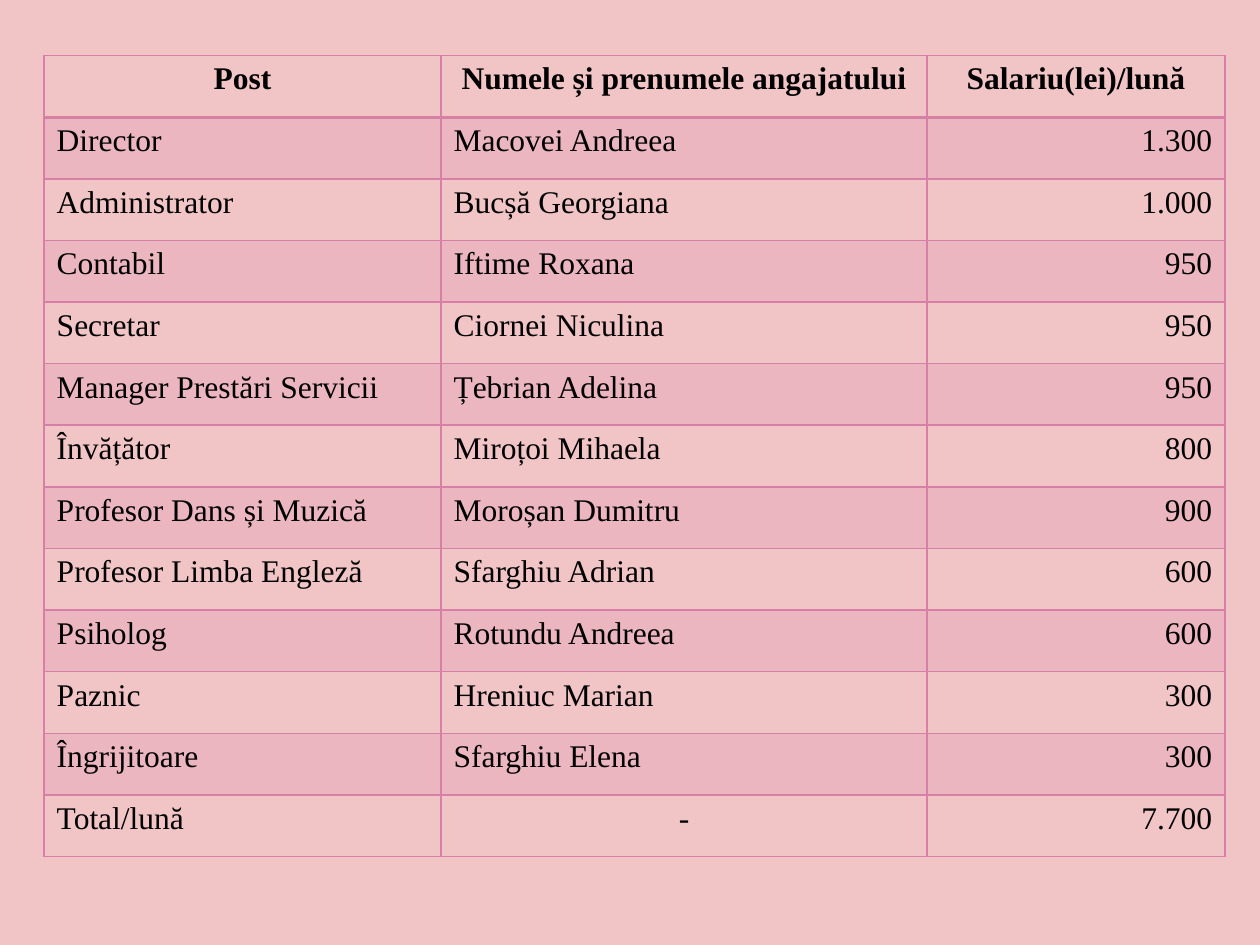
"""Builds a slide with the monthly salary table of the staff."""
import pptx
import pptx.dml.color
import pptx.enum.text
import pptx.oxml
import pptx.oxml.ns
import pptx.util

Cm = pptx.util.Cm
Pt = pptx.util.Pt
ALIGN = pptx.enum.text.PP_ALIGN

COLOURS = {"background": "F1C4C6", "accent": "D680A5", "text": "000000"}
FONT = "Times New Roman"
COLUMN_WIDTHS = (8, 9.8, 6)
TABLE_HEIGHT = 16.15
COLUMN_ALIGNS = (ALIGN.LEFT, ALIGN.LEFT, ALIGN.RIGHT)
HEADER = ("Post", "Numele și prenumele angajatului", "Salariu(lei)/lună")
STAFF = (
    ("Director", "Macovei Andreea", "1.300"),
    ("Administrator", "Bucșă Georgiana", "1.000"),
    ("Contabil", "Iftime Roxana", "950"),
    ("Secretar", "Ciornei Niculina", "950"),
    ("Manager Prestări Servicii", "Țebrian Adelina", "950"),
    ("Învățător", "Miroțoi Mihaela", "800"),
    ("Profesor Dans și Muzică", "Moroșan Dumitru", "900"),
    ("Profesor Limba Engleză", "Sfarghiu Adrian", "600"),
    ("Psiholog", "Rotundu Andreea", "600"),
    ("Paznic", "Hreniuc Marian", "300"),
    ("Îngrijitoare", "Sfarghiu Elena", "300"),
)
TOTAL = ("Total/lună", "-", "7.700")


def colour(name):
    return pptx.dml.color.RGBColor.from_string(COLOURS[name])


def set_borders(cell, top, bottom):
    properties = cell._tc.get_or_add_tcPr()
    for side, width in (("L", 1), ("R", 1), ("T", top), ("B", bottom)):
        properties.append(pptx.oxml.parse_xml(
            f'<a:ln{side} {pptx.oxml.ns.nsdecls("a")} w="{Pt(width)}">'
            f'<a:solidFill><a:srgbClr val="{COLOURS["accent"]}"/></a:solidFill>'
            f'</a:ln{side}>'))


def set_fill(cell, banded):
    if not banded:
        cell.fill.background()
        return
    cell.fill.solid()
    cell.fill.fore_color.rgb = colour("accent")
    tint = cell._tc.tcPr.find("a:solidFill/a:srgbClr", pptx.oxml.ns._nsmap)
    tint.append(pptx.oxml.parse_xml(
        f'<a:alpha {pptx.oxml.ns.nsdecls("a")} val="20000"/>'))


def write_cell(cell, text, align, bold):
    para = cell.text_frame.paragraphs[0]
    para.alignment = align
    span = para.add_run()
    span.text = text
    span.font.name = FONT
    span.font.size = Pt(18)
    span.font.bold = bold
    span.font.color.rgb = colour("text")


def add_salary_table(page):
    rows = (HEADER, *STAFF, TOTAL)
    table = page.shapes.add_table(
        len(rows), len(HEADER), Cm(0.89), Cm(1.12),
        Cm(sum(COLUMN_WIDTHS)), Cm(TABLE_HEIGHT)).table
    for column, width in zip(table.columns, COLUMN_WIDTHS):
        column.width = Cm(width)
    for index, texts in enumerate(rows):
        table.rows[index].height = Cm(TABLE_HEIGHT / len(rows))
        for position, text in enumerate(texts):
            cell = table.cell(index, position)
            is_header = index == 0
            centred = is_header or text == "-"
            align = ALIGN.CENTER if centred else COLUMN_ALIGNS[position]
            set_borders(cell, 2 if index == 1 else 1, 2 if is_header else 1)
            set_fill(cell, index % 2 == 1)
            write_cell(cell, text, align, is_header)


def main():
    deck = pptx.Presentation()
    deck.slide_width, deck.slide_height = Cm(25.4), Cm(19.05)
    page = deck.slides.add_slide(deck.slide_layouts[6])
    page.background.fill.solid()
    page.background.fill.fore_color.rgb = colour("background")
    add_salary_table(page)
    deck.save("out.pptx")


if __name__ == "__main__":
    main()
